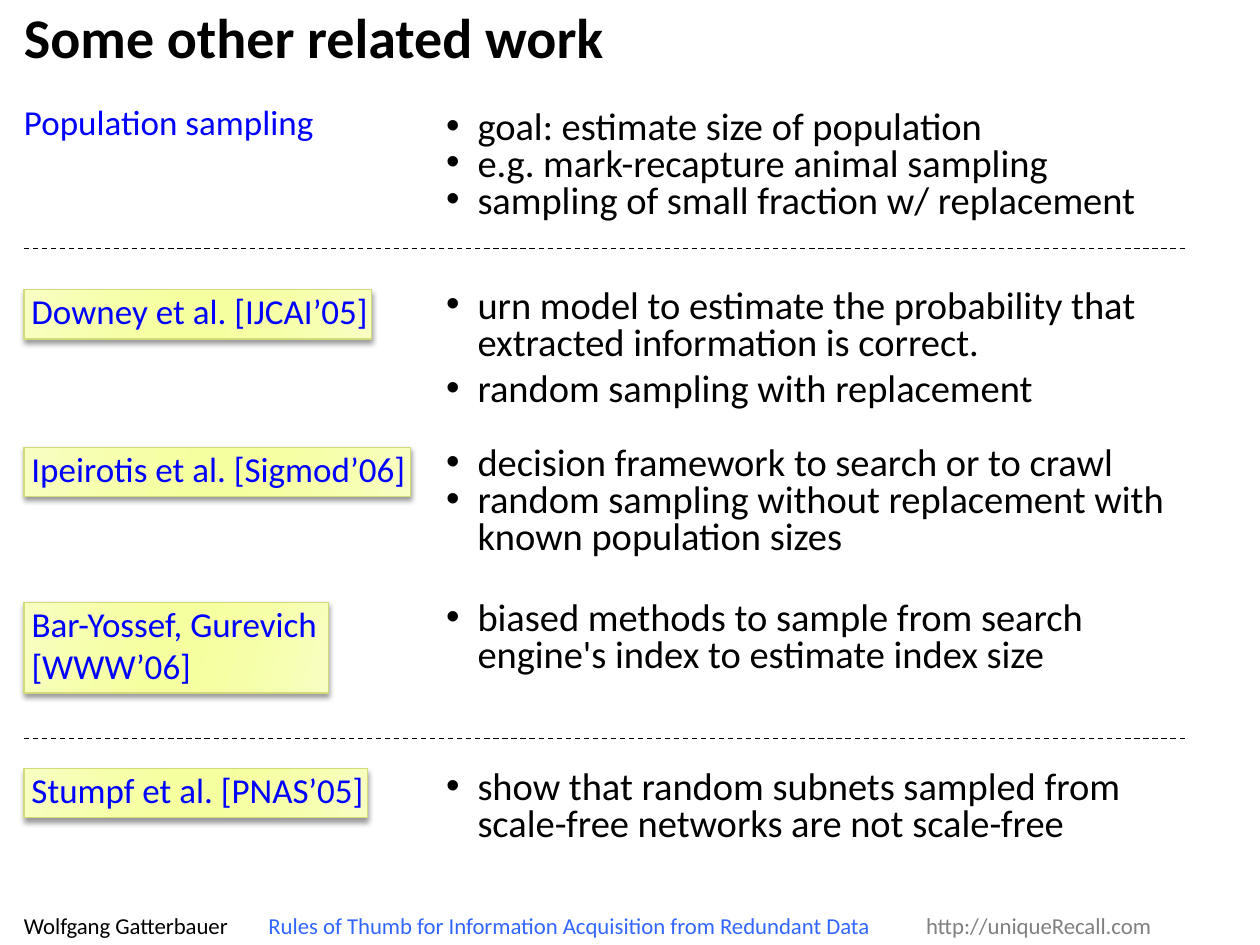
from lxml.etree import SubElement
from pptx import Presentation
from pptx.dml.color import RGBColor
from pptx.enum.dml import MSO_LINE
from pptx.enum.shapes import MSO_CONNECTOR, MSO_SHAPE
from pptx.enum.text import MSO_ANCHOR, PP_ALIGN
from pptx.oxml import parse_xml
from pptx.oxml.ns import nsdecls, qn
from pptx.util import Emu, Inches, Pt

COLORS = {"text": "000000", "label": "0000FF", "talk": "3366FF",
          "site": "808080", "border": "D2DA7A"}
GRADIENT = [(0, "F8FEC2"), (30, "F6FFA7"), (45, "F6FF9F"),
            (55, "F6FF9F"), (73, "F6FFA7"), (100, "F8FEC2")]
FONT = "Calibri"
TITLE = "Some other related work"

# label, label top, label width, highlighted, bullets top, [(bullet, line spacing)]
ROWS = [
    ("Population sampling", 0.85, 2.4, False, 0.88,
     [("goal: estimate size of population", 0.8),
      ("e.g. mark-recapture animal sampling", 0.8),
      ("sampling of small fraction w/ replacement", 0.8)]),
    ("Downey et al. [IJCAI’05]", 2.3, 2.76, True, 2.3,
     [("urn model to estimate the probability that extracted "
       "information is correct.", 0.8),
      ("random sampling with replacement", 1.0)]),
    ("Ipeirotis et al. [Sigmod’06]", 3.55, 3.07, True, 3.55,
     [("decision framework to search or to crawl", 0.8),
      ("random sampling without replacement with known population sizes", 0.8)]),
    ("Bar-Yossef, Gurevich\v[WWW’06]", 4.78, 2.42, True, 4.78,
     [("biased methods to sample from search engine's index "
       "to estimate index size", 0.8)]),
    ("Stumpf et al. [PNAS’05]", 6.1, 2.73, True, 6.12,
     [("show that random subnets sampled from scale-free networks "
       "are not scale-free", 0.8)]),
]
DIVIDERS = [1.97, 5.86]
# text, colour, start measured from the left margin
FOOTER = [("Wolfgang Gatterbauer", "text", 0),
          ("Rules of Thumb for Information Acquisition from Redundant Data",
           "talk", 1.94),
          ("http://uniqueRecall.com", "site", 7.16)]

LEFT, RIGHT = 0.19, 9.43
BULLETS_LEFT, BULLETS_WIDTH = 3.54, 5.7
LINE_HEIGHT, LABEL_PAD = 0.33, 0.06


def rgb(name):
    return RGBColor.from_string(COLORS[name])


def style(p, size, color, bold=False):
    for r in p.runs:
        r.font.name, r.font.size, r.font.bold = FONT, Pt(size), bold
        r.font.color.rgb = rgb(color)


def set_frame(sp, left=0, bottom=0):
    tf = sp.text_frame
    tf.word_wrap = True
    tf.vertical_anchor = MSO_ANCHOR.TOP
    tf.margin_top = tf.margin_right = 0
    tf.margin_left, tf.margin_bottom = Inches(left), Inches(bottom)
    return tf


def add_text(slide, x, y, w, h):
    sp = slide.shapes.add_textbox(Inches(x), Inches(y), Inches(w), Inches(h))
    return set_frame(sp)


def highlight(sp):
    """Yellow gradient, thin border and soft drop shadow."""
    sp.line.color.rgb = rgb("border")
    sp.line.width = Pt(0.75)
    stops = "".join(f'<a:gs pos="{pos * 1000}"><a:srgbClr val="{c}"/></a:gs>'
                    for pos, c in GRADIENT)
    sp.fill.background()
    props = sp._element.spPr
    props.replace(props.find(qn("a:noFill")), parse_xml(
        f'<a:gradFill {nsdecls("a")} rotWithShape="1"><a:gsLst>{stops}</a:gsLst>'
        f'<a:lin ang="{16 * 60000}" scaled="0"/></a:gradFill>'))
    props.append(parse_xml(
        f'<a:effectLst {nsdecls("a")}><a:outerShdw blurRad="{Pt(3)}" '
        f'dist="{Pt(2)}" dir="{90 * 60000}" rotWithShape="0">'
        '<a:srgbClr val="000000"><a:alpha val="40000"/></a:srgbClr>'
        '</a:outerShdw></a:effectLst>'))


def add_label(slide, text, y, w, highlighted):
    h = 0.06 + LINE_HEIGHT * (1 + text.count("\v"))
    if highlighted:
        sp = slide.shapes.add_shape(MSO_SHAPE.RECTANGLE, Inches(LEFT), Inches(y),
                                    Inches(w), Inches(h))
        highlight(sp)
        tf = set_frame(sp, LABEL_PAD, 0.05)
    else:
        tf = add_text(slide, LEFT, y, w, h)
    tf.text = text
    p = tf.paragraphs[0]
    p.alignment = PP_ALIGN.LEFT
    p.line_spacing = 1.0 if highlighted else 0.85
    style(p, 20, "label")


def add_bullets(slide, y, bullets):
    tf = add_text(slide, BULLETS_LEFT, y, BULLETS_WIDTH, 0.3 * max(2, len(bullets)))
    tf.text = "\n".join(text for text, _ in bullets)
    for p, (_, spacing) in zip(tf.paragraphs, bullets):
        p.line_spacing = spacing
        style(p, 22, "text")
        props = p._p.get_or_add_pPr()
        props.set("marL", str(Inches(0.25)))
        props.set("indent", str(-Inches(0.25)))
        SubElement(props, qn("a:buFont"), typeface="Arial")
        SubElement(props, qn("a:buChar"), char="•")


def add_divider(slide, y):
    line = slide.shapes.add_connector(MSO_CONNECTOR.STRAIGHT, Inches(LEFT), Inches(y),
                                      Inches(RIGHT), Inches(y))
    line.line.color.rgb = rgb("text")
    line.line.width = Pt(0.75)
    line.line.dash_style = MSO_LINE.DASH
    SubElement(line._element.spPr, qn("a:effectLst"))


def add_footer(slide):
    tf = add_text(slide, LEFT, 7.23, RIGHT - LEFT, 0.22)
    tf.vertical_anchor = MSO_ANCHOR.BOTTOM
    p = tf.paragraphs[0]
    tabs = SubElement(p._p.get_or_add_pPr(), qn("a:tabLst"))
    for text, color, start in FOOTER:
        r = p.add_run()
        r.text = "\t" + text if start else text
        r.font.name, r.font.size = FONT, Pt(13)
        r.font.color.rgb = rgb(color)
        if start:
            SubElement(tabs, qn("a:tab"), pos=str(Emu(Inches(start))), algn="l")


def main():
    prs = Presentation()
    prs.slide_width, prs.slide_height = Inches(10), Inches(7.5)
    slide = prs.slides.add_slide(prs.slide_layouts[6])

    add_footer(slide)
    tf = add_text(slide, LEFT, 0.02, RIGHT - LEFT, 0.54)
    tf.text = TITLE
    style(tf.paragraphs[0], 32, "text", bold=True)

    for label, y, w, highlighted, bullets_y, bullets in ROWS:
        add_label(slide, label, y, w, highlighted)
        add_bullets(slide, bullets_y, bullets)
    for y in DIVIDERS:
        add_divider(slide, y)
    prs.save("out.pptx")


if __name__ == "__main__":
    main()
